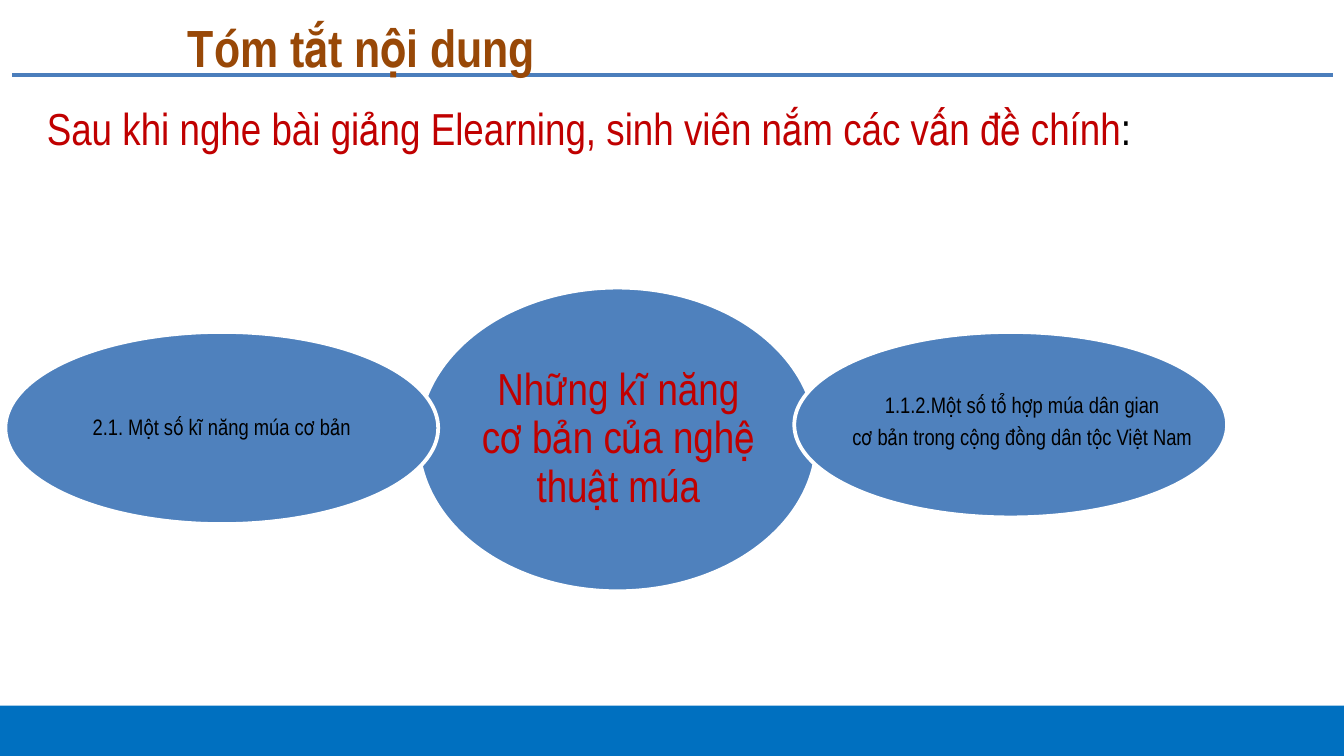
from pptx import Presentation
from pptx.dml.color import RGBColor
from pptx.enum.shapes import MSO_CONNECTOR, MSO_SHAPE
from pptx.enum.text import MSO_ANCHOR, PP_ALIGN
from pptx.util import Inches, Pt
from lxml import etree

RECT, OVAL = MSO_SHAPE.RECTANGLE, MSO_SHAPE.OVAL
STRAIGHT = MSO_CONNECTOR.STRAIGHT
TOP, MIDDLE = MSO_ANCHOR.TOP, MSO_ANCHOR.MIDDLE
CENTER, JUSTIFY = PP_ALIGN.CENTER, PP_ALIGN.JUSTIFY
FONT = "Arial Narrow"
RED, BLACK = "C00000", "000000"
DRAWING_NS = "http://schemas.openxmlformats.org/drawingml/2006/main"


def rgb(value):
    """Turn a hex string into a colour."""
    return RGBColor.from_string(value)


def inches(*values):
    """Turn numbers into lengths in inches."""
    return [Inches(v) for v in values]


def format_run(r, size, color, bold=False):
    """Give a run its font, size and colour."""
    r.font.name, r.font.size, r.font.bold = FONT, Pt(size), bold
    r.font.color.rgb = rgb(color)


def set_frame(tf, anchor, inset=None):
    """Wrap a text frame, anchor it and set equal insets if given."""
    tf.word_wrap, tf.vertical_anchor = True, anchor
    if inset is not None:
        tf.margin_left = tf.margin_right = Inches(inset)
        tf.margin_top = tf.margin_bottom = Inches(inset)


def add_filled(s, kind, box, fill, line=None):
    """Add a flat filled shape with an optional outline."""
    sp = s.shapes.add_shape(kind, *inches(*box))
    sp.shadow.inherit = False
    sp.fill.solid()
    sp.fill.fore_color.rgb = rgb(fill)
    if line:
        sp.line.color.rgb = rgb(line)
        sp.line.width = Pt(2)
    else:
        sp.line.fill.background()


def add_header(s, box):
    """Draw the rule across the box and place the title in front of it."""
    x, y, w, h = box
    rule = s.shapes.add_connector(STRAIGHT, *inches(x, y + h, x + w, y + h))
    rule.line.color.rgb = rgb("4B7EBC")
    rule.line.width = Pt(2)
    etree.SubElement(rule._element.spPr, f"{{{DRAWING_NS}}}effectLst")
    title = s.shapes.title
    rule._element.addnext(title._element)
    title.left, title.top, title.width, title.height = inches(x - 4.54, y, 14.28, 0.57)
    tf = title.text_frame
    tf.text = "Tóm tắt nội dung"
    set_frame(tf, MIDDLE)
    tf.paragraphs[0].alignment = CENTER
    format_run(tf.paragraphs[0].runs[0], 28, "984807", True)


def add_intro(s, box):
    """Write the opening sentence with its black colon."""
    tf = s.shapes.add_textbox(*inches(*box)).text_frame
    set_frame(tf, TOP)
    p = tf.paragraphs[0]
    p.alignment, p.line_spacing, p.space_before = JUSTIFY, 1.1, Pt(6)
    sentence = "Sau khi nghe bài giảng Elearning, sinh viên nắm các vấn đề chính"
    for text, color in ((sentence, RED), (":", BLACK)):
        r = p.add_run()
        r.text = text
        format_run(r, 24, color)


def add_bubble(s, box, label, lines, size, color, inset=0.02):
    """Draw an ellipse with a label placed relative to its corner."""
    x, y = box[:2]
    dx, dy, w, h = label
    add_filled(s, OVAL, box, "4F81BD", "FFFFFF")
    tf = s.shapes.add_textbox(*inches(x + dx, y + dy, w, h)).text_frame
    set_frame(tf, MIDDLE, inset)
    tf.text = "\n".join(lines)
    for p in tf.paragraphs:
        p.alignment, p.line_spacing = CENTER, 0.9
        p.space_after = Pt(0.35 * size)
        format_run(p.runs[0], size, color)


def main():
    """Build the summary slide."""
    prs = Presentation()
    prs.slide_width, prs.slide_height = inches(10, 10 * 9 / 16)
    s = prs.slides.add_slide(prs.slide_layouts[5])
    add_filled(s, RECT, (-0.04, 5.25, 10.08, 0.38), "0070C0")
    add_header(s, (0.09, 0.06, 9.83, 0.5))
    add_intro(s, (0.25, 0.66, 14.28, 4.97))
    add_bubble(s, (3.11, 2.14, 2.97, 2.26), (0.43, 0.33, 2.12, 1.6),
               ["Những kĩ năng cơ bản của nghệ thuật múa"], 24, RED, 0.03)
    add_bubble(s, (0.04, 2.47, 3.22, 1.43), (0.47, 0.21, 2.28, 1.01),
               ["2.1. Một số kĩ năng múa cơ bản"], 12, BLACK)
    add_bubble(s, (5.91, 2.47, 3.22, 1.38), (0.34, 0.18, 2.75, 0.98),
               ["1.1.2.Một số tổ hợp múa dân gian ",
                "cơ bản trong cộng đồng dân tộc Việt Nam "], 12, BLACK)
    prs.save("out.pptx")


if __name__ == "__main__":
    main()
